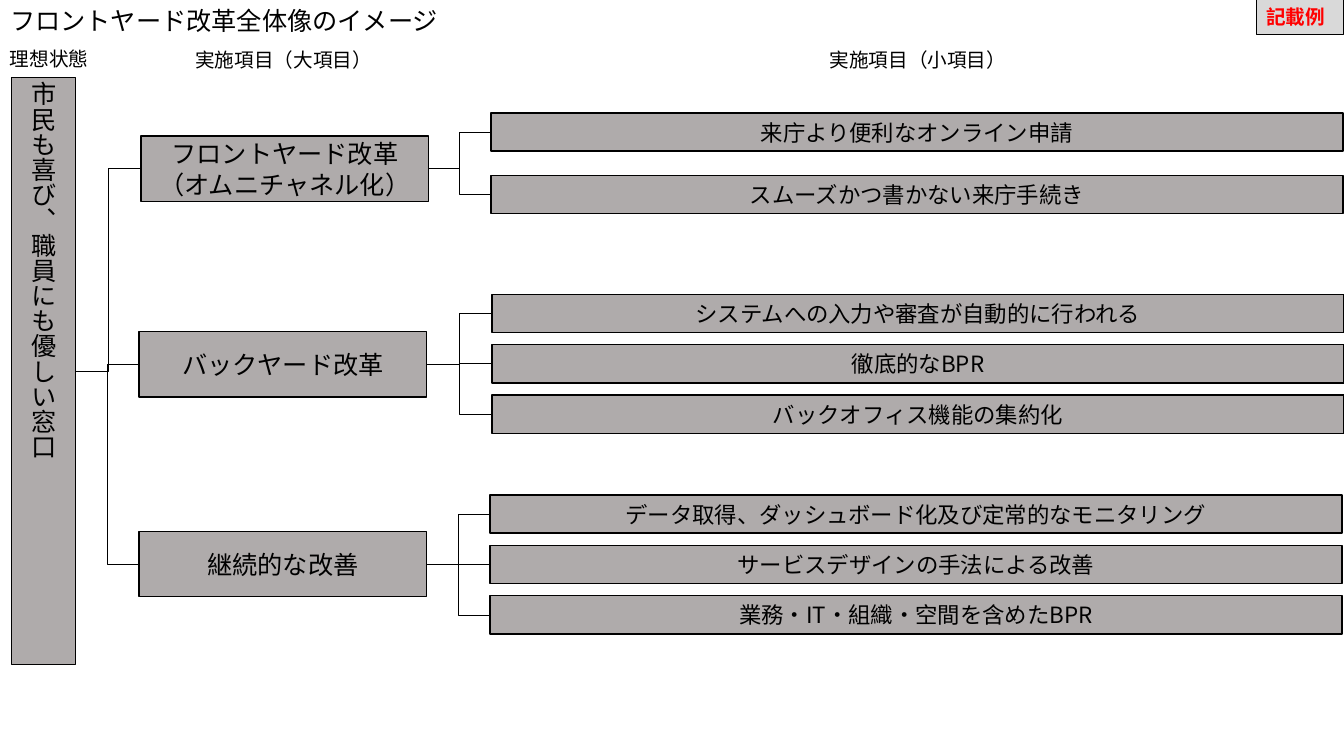
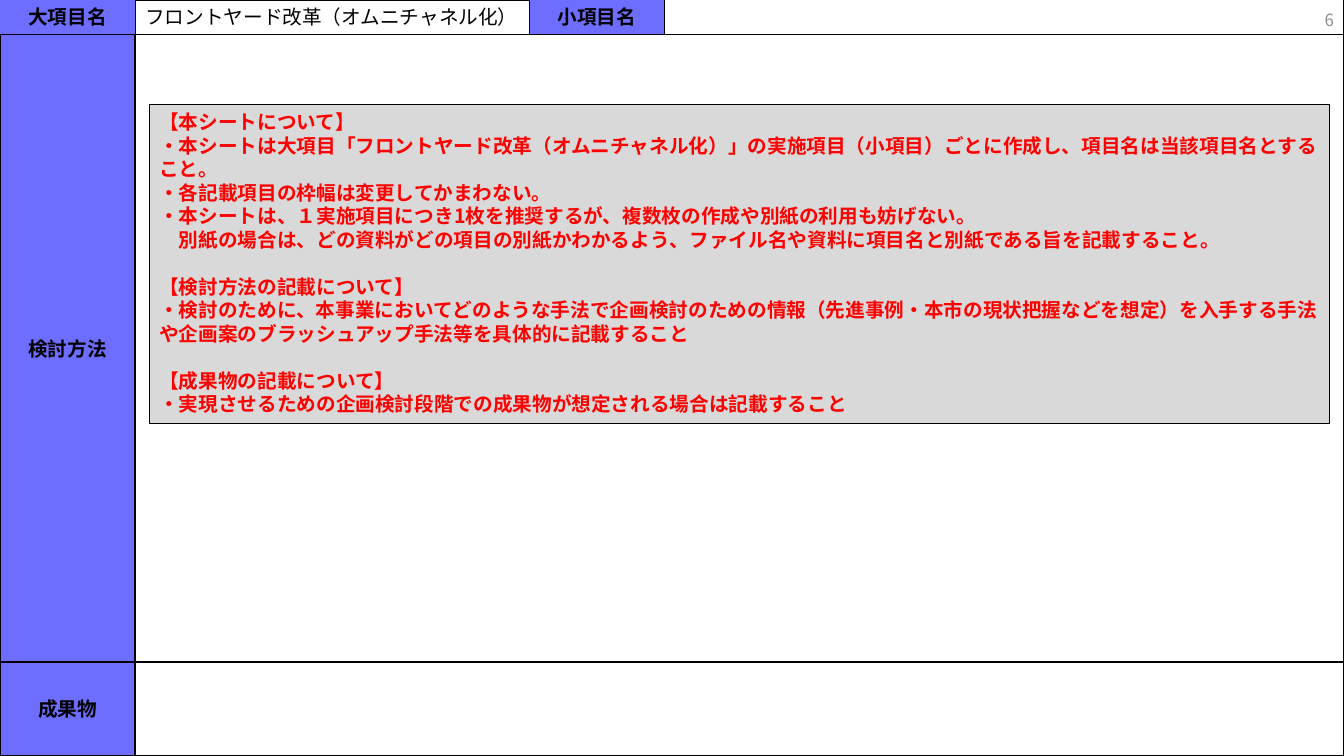
from dataclasses import dataclass
from typing import Optional

from lxml.etree import SubElement
from pptx import Presentation
from pptx.dml.color import RGBColor as Rgb
from pptx.enum.shapes import MSO_CONNECTOR as Link, MSO_SHAPE as Form
from pptx.enum.text import MSO_ANCHOR as Anchor, MSO_AUTO_SIZE as Fit, PP_ALIGN as Align
from pptx.oxml.ns import qn
from pptx.util import Inches, Pt


@dataclass(frozen=True)
class Theme:
    font: str = "Noto Sans CJK JP"
    black: str = "000000"
    red: str = "FF0000"
    gray: str = "AFABAB"
    pale: str = "D9D9D9"
    blue: str = "6D6DFF"
    dim: str = "8C8C8C"
    large: int = 18
    medium: int = 16
    base: int = 14
    small: int = 12
    thin: float = 0.5
    fine: float = 0.75
    solid: float = 1
    gap: float = 16.8


@dataclass(frozen=True)
class Box:
    left: float
    top: float
    width: float
    height: float


@dataclass(frozen=True)
class Branch:
    name: str
    left: float
    top: float
    leaf_left: float
    leaf_top: float
    step: float
    leaves: tuple[str, ...]


@dataclass(frozen=True)
class Cell:
    box: Box
    text: str = ""
    fill: Optional[str] = None
    line: float = 1
    anchor: Anchor = Anchor.MIDDLE


THEME = Theme()
WIDE, TALL = 13.33, 7.5
SIDE, BAND, SPLIT = 1.34, 0.34, 6.57
MAIN, SUB = 5.25, 6.59

BRANCHES = (
    Branch("フロントヤード改革\n（オムニチャネル化）", 1.4, 1.35, 4.87, 1.12, 0.62,
           ("来庁より便利なオンライン申請", "スムーズかつ書かない来庁手続き")),
    Branch("バックヤード改革", 1.38, 3.29, 4.88, 2.92, 0.5,
           ("システムへの入力や審査が自動的に行われる", "徹底的なBPR", "バックオフィス機能の集約化")),
    Branch("継続的な改善", 1.38, 5.27, 4.86, 4.91, 0.5,
           ("データ取得、ダッシュボード化及び定常的なモニタリング",
            "サービスデザインの手法による改善", "業務・IT・組織・空間を含めたBPR")),
)

HEADS = (
    (Box(0, 0.42, 1.07, BAND), "理想状態", Align.LEFT),
    (Box(1.4, 0.43, 2.83, BAND), "実施項目（大項目）", Align.CENTER),
    (Box(7.69, 0.43, 2.83, BAND), "実施項目（小項目）", Align.CENTER),
)

CELLS = (
    Cell(Box(MAIN, 0, SUB - MAIN, BAND), "小項目名", THEME.blue, THEME.fine, Anchor.TOP),
    Cell(Box(SUB, 0, WIDE - SUB, BAND), line=THEME.fine),
    Cell(Box(SIDE, BAND, WIDE - SIDE, SPLIT - BAND)),
    Cell(Box(SIDE, SPLIT, WIDE - SIDE, TALL - SPLIT)),
    Cell(Box(0, BAND, SIDE, SPLIT - BAND), "検討方法", THEME.blue),
    Cell(Box(0, SPLIT, SIDE, TALL - SPLIT), "成果物", THEME.blue),
    Cell(Box(0, 0, SIDE, BAND), "大項目名", THEME.blue, THEME.fine, Anchor.TOP),
)

GUIDE = """【本シートについて】
・本シートは大項目「フロントヤード改革（オムニチャネル化）」の実施項目（小項目）ごとに作成し、項目名は当該項目名とすること。
・各記載項目の枠幅は変更してかまわない。
・本シートは、１実施項目につき1枚を推奨するが、複数枚の作成や別紙の利用も妨げない。
　別紙の場合は、どの資料がどの項目の別紙かわかるよう、ファイル名や資料に項目名と別紙である旨を記載すること。
【検討方法の記載について】
・検討のために、本事業においてどのような手法で企画検討のための情報（先進事例・本市の現状把握などを想定）を入手する手法や企画案のブラッシュアップ手法等を具体的に記載すること
【成果物の記載について】
・実現させるための企画検討段階での成果物が想定される場合は記載すること"""


def place(box: Box) -> tuple:
    return Inches(box.left), Inches(box.top), Inches(box.width), Inches(box.height)


def write(shape, text: str, *, size: int = THEME.base, color: str = THEME.black,
          bold: bool = False, align: Align = Align.LEFT, anchor: Anchor = Anchor.TOP,
          gap: float = 0) -> None:
    frame = shape.text_frame
    frame.word_wrap = True
    frame.auto_size = Fit.NONE
    frame.vertical_anchor = anchor
    for index, line in enumerate(text.split("\n")):
        para = frame.add_paragraph() if index else frame.paragraphs[0]
        para.alignment = align
        para.space_before = Pt(gap if index and line.startswith("【") else 0)
        run = para.add_run()
        run.text = line
        font = run.font
        font.name, font.size, font.bold = THEME.font, Pt(size), bold
        font.color.rgb = Rgb.from_string(color)
        SubElement(font._element, qn("a:ea")).set("typeface", THEME.font)


def paint(shape, fill: Optional[str], line: float) -> None:
    if fill:
        shape.fill.solid()
        shape.fill.fore_color.rgb = Rgb.from_string(fill)
    else:
        shape.fill.background()
    shape.line.color.rgb = Rgb.from_string(THEME.black)
    shape.line.width = Pt(line)


def panel(slide, box: Box, fill: Optional[str] = THEME.gray, line: float = THEME.solid):
    shape = slide.shapes.add_shape(Form.RECTANGLE, *place(box))
    shape.shadow.inherit = False
    paint(shape, fill, line)
    return shape


def label(slide, box: Box, text: str, **style) -> None:
    write(slide.shapes.add_textbox(*place(box)), text, **style)


def settle(holder, box: Box, text: str, **style) -> None:
    holder.left, holder.top, holder.width, holder.height = place(box)
    write(holder, text, **style)


def join(slide, start, end) -> None:
    line = slide.shapes.add_connector(Link.ELBOW, 0, 0, 0, 0)
    line.begin_connect(start, 3)
    line.end_connect(end, 1)
    line.line.color.rgb = Rgb.from_string(THEME.black)
    line.line.width = Pt(THEME.thin)
    SubElement(line._element.spPr, qn("a:effectLst"))


def draw_tree(deck) -> None:
    slide = deck.slides.add_slide(deck.slide_layouts[5])
    settle(slide.shapes.title, Box(0, 0, WIDE, 0.4),
           "フロントヤード改革全体像のイメージ", size=THEME.large)
    root = panel(slide, Box(0.11, 0.77, 0.64, 5.82), line=0.25)
    write(root, "市民も喜び、職員にも優しい窓口", size=THEME.large,
          align=Align.CENTER, anchor=Anchor.MIDDLE)
    frame = root.text_frame
    frame.margin_left = frame.margin_right = Inches(0.04)
    frame.margin_top = frame.margin_bottom = Inches(0.04)
    frame._txBody.bodyPr.set("vert", "eaVert")
    for branch in BRANCHES:
        major = panel(slide, Box(branch.left, branch.top, 2.85, 0.65))
        write(major, branch.name, size=THEME.large, align=Align.CENTER, anchor=Anchor.MIDDLE)
        join(slide, root, major)
        for index, name in enumerate(branch.leaves):
            top = branch.leaf_top + index * branch.step
            leaf = panel(slide, Box(branch.leaf_left, top, 8.45, 0.38))
            write(leaf, name, size=THEME.medium, align=Align.CENTER, anchor=Anchor.MIDDLE)
            join(slide, major, leaf)
    for box, text, align in HEADS:
        label(slide, box, text, align=align)
    badge = panel(slide, Box(12.46, 0, 0.87, BAND), THEME.pale, THEME.fine)
    write(badge, "記載例", color=THEME.red, bold=True)


def draw_sheet(deck) -> None:
    slide = deck.slides.add_slide(deck.slide_layouts[1])
    title, body = slide.shapes.title, slide.placeholders[1]
    settle(title, Box(SIDE, 0, MAIN - SIDE, BAND), "フロントヤード改革（オムニチャネル化）")
    paint(title, None, THEME.fine)
    settle(body, Box(1.48, 1.04, 11.71, 3.16), GUIDE,
           color=THEME.red, bold=True, gap=THEME.gap)
    paint(body, THEME.pale, THEME.fine)
    for para in body.text_frame.paragraphs:
        props = para._p.get_or_add_pPr()
        props.set("marL", "0")
        props.set("indent", "0")
        SubElement(props, qn("a:buNone"))
    for cell in CELLS:
        shape = panel(slide, cell.box, cell.fill, cell.line)
        if cell.text:
            write(shape, cell.text, bold=True, align=Align.CENTER, anchor=cell.anchor)
    label(slide, Box(10.33, 0, 3, 0.4), "6", size=THEME.small, color=THEME.dim,
          align=Align.RIGHT, anchor=Anchor.MIDDLE)


def main() -> None:
    deck = Presentation()
    deck.slide_width, deck.slide_height = Inches(WIDE), Inches(TALL)
    draw_tree(deck)
    draw_sheet(deck)
    deck.save("out.pptx")


if __name__ == "__main__":
    main()
